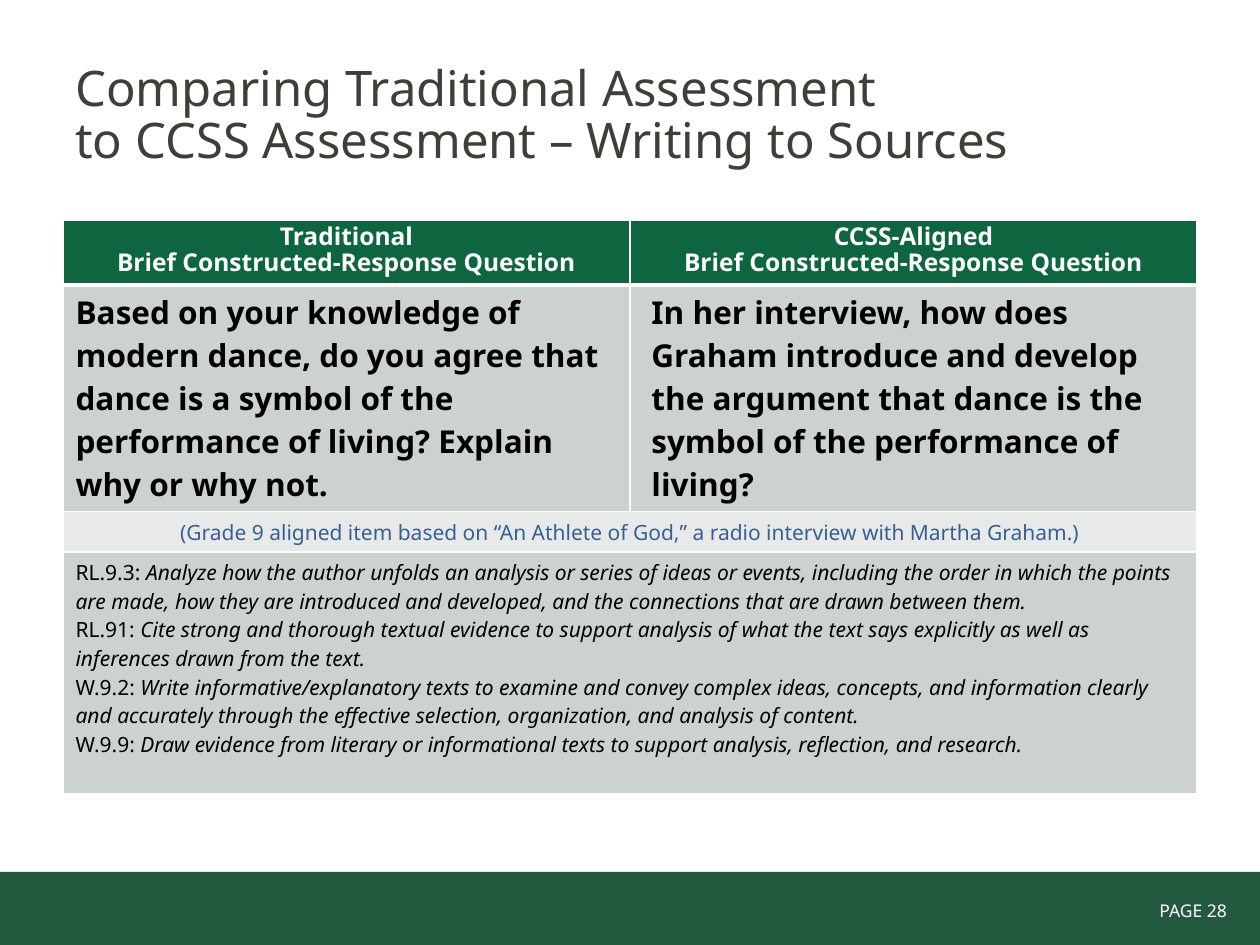
from lxml import etree
from pptx import Presentation
from pptx.dml.color import RGBColor
from pptx.enum.shapes import MSO_SHAPE
from pptx.enum.text import MSO_ANCHOR, PP_ALIGN
from pptx.oxml.ns import qn
from pptx.util import Inches, Pt

LEFT, CENTER, RIGHT = PP_ALIGN.LEFT, PP_ALIGN.CENTER, PP_ALIGN.RIGHT
TOP, MIDDLE = MSO_ANCHOR.TOP, MSO_ANCHOR.MIDDLE
RECTANGLE = MSO_SHAPE.RECTANGLE
FONT = "Noto Sans"
COLORS = {
    "white": "FFFFFF", "black": "000000", "title": "3F3F39", "footer": "23593E",
    "header": "0E6641", "body": "CCD3CF", "band": "E7EAE9", "source": "376092",
}

TITLE = "Comparing Traditional Assessment\vto CCSS Assessment – Writing to Sources"
HEADERS = ["Traditional", "CCSS-Aligned"]
HEADER_LINE = "Brief Constructed-Response Question"
QUESTIONS = [
    "Based on your knowledge of modern dance, do you agree that dance is a symbol "
    "of the performance of living? Explain why or why not.",
    "In her interview, how does Graham introduce and develop the argument that "
    "dance is the symbol of the performance of living?",
]
SOURCE = ("(Grade 9 aligned item based on “An Athlete of God,” "
          "a radio interview with Martha Graham.)")
STANDARDS = [
    ("RL.9.3: ", "Analyze how the author unfolds an analysis or series of ideas or "
     "events, including the order in which the points are made, how they are "
     "introduced and developed, and the connections that are drawn between them."),
    ("RL.91: ", "Cite strong and thorough textual evidence to support analysis of what "
     "the text says explicitly as well as inferences drawn from the text."),
    ("W.9.2: ", "Write informative/explanatory texts to examine and convey complex "
     "ideas, concepts, and information clearly and accurately through the effective "
     "selection, organization, and analysis of content."),
    ("W.9.9: ", "Draw evidence from literary or informational texts to support "
     "analysis, reflection, and research."),
]


def color(name):
    return RGBColor.from_string(COLORS[name])


def write(frame, paragraphs, size=12, ink="black", bold=False, align=LEFT,
          spacing=None, indent=0):
    """Each paragraph is a string, or a pair of plain and italic text."""
    frame.word_wrap = True
    for index, content in enumerate(paragraphs):
        para = frame.paragraphs[0] if index == 0 else frame.add_paragraph()
        para.alignment = align
        if spacing:
            para.line_spacing = spacing
        if indent:
            properties = para._p.get_or_add_pPr()
            properties.set("marL", str(Inches(indent)))
            properties.set("indent", "0")
        parts = [content] if isinstance(content, str) else content
        for position, text in enumerate(parts):
            for number, line in enumerate(text.split("\v")):
                if number:
                    para.add_line_break()
                span = para.add_run()
                span.text = line
                span.font.name = FONT
                span.font.size = Pt(size)
                span.font.bold = bold
                span.font.italic = position == 1
                span.font.color.rgb = color(ink)


def style_cell(cell, fill, bottom=1, anchor=TOP):
    cell.vertical_anchor = anchor
    properties = cell._tc.get_or_add_tcPr()
    for side, width in (("L", 1), ("R", 1), ("T", 1), ("B", bottom)):
        border = etree.SubElement(properties, qn(f"a:ln{side}"), w=str(Pt(width)))
        solid = etree.SubElement(border, qn("a:solidFill"))
        etree.SubElement(solid, qn("a:srgbClr"), val=COLORS["white"])
    cell.fill.solid()
    cell.fill.fore_color.rgb = color(fill)


def add_title(page, left, top, width, height):
    box = page.shapes.add_textbox(left, top, width, height)
    box.text_frame.vertical_anchor = MIDDLE
    write(box.text_frame, [TITLE], size=28, ink="title", spacing=0.9)


def add_comparison(page, left, top, width, row_heights):
    table = page.shapes.add_table(
        len(row_heights), 2, left, top, width, sum(row_heights)).table
    for row, height in zip(table.rows, row_heights):
        row.height = height

    # Headers and questions, one column for each kind of assessment
    for column in range(2):
        header, question = table.cell(0, column), table.cell(1, column)
        style_cell(header, "header", bottom=3)
        write(header.text_frame, [HEADERS[column], HEADER_LINE], size=14, ink="white",
              bold=True, align=CENTER, spacing=Pt(14.8))
        style_cell(question, "body")
        write(question.text_frame, [QUESTIONS[column]], size=18, bold=True,
              indent=0.07 * column)

    # Source and standards, across both columns
    for row, fill, anchor in ((2, "band", MIDDLE), (3, "body", TOP)):
        table.cell(row, 0).merge(table.cell(row, 1))
        for column in range(2):
            style_cell(table.cell(row, column), fill, anchor=anchor)
    write(table.cell(2, 0).text_frame, [SOURCE], ink="source", align=CENTER)
    write(table.cell(3, 0).text_frame, STANDARDS)


def add_footer(page, left, top, width, height):
    bar = page.shapes.add_shape(RECTANGLE, left, top, width, height)
    bar.shadow.inherit = False
    bar.fill.solid()
    bar.fill.fore_color.rgb = color("footer")
    bar.line.fill.background()
    label = page.shapes.add_textbox(
        left + width - Inches(1.73), top + Inches(0.17), Inches(1.59), Inches(0.27))
    write(label.text_frame, ["PAGE 28 "], size=10, ink="white", align=RIGHT)


def main():
    deck = Presentation()
    deck.slide_width, deck.slide_height = Inches(10), Inches(7.5)
    page = deck.slides.add_slide(deck.slide_layouts[6])
    add_footer(page, Inches(0), Inches(6.92), Inches(10.01), Inches(0.59))
    add_title(page, Inches(0.5), Inches(0.3), Inches(9), Inches(1.25))
    add_comparison(page, Inches(0.5), Inches(1.75), Inches(9),
                   [Inches(height) for height in (0.51, 1.8, 0.32, 1.92)])
    deck.save("out.pptx")


if __name__ == "__main__":
    main()
